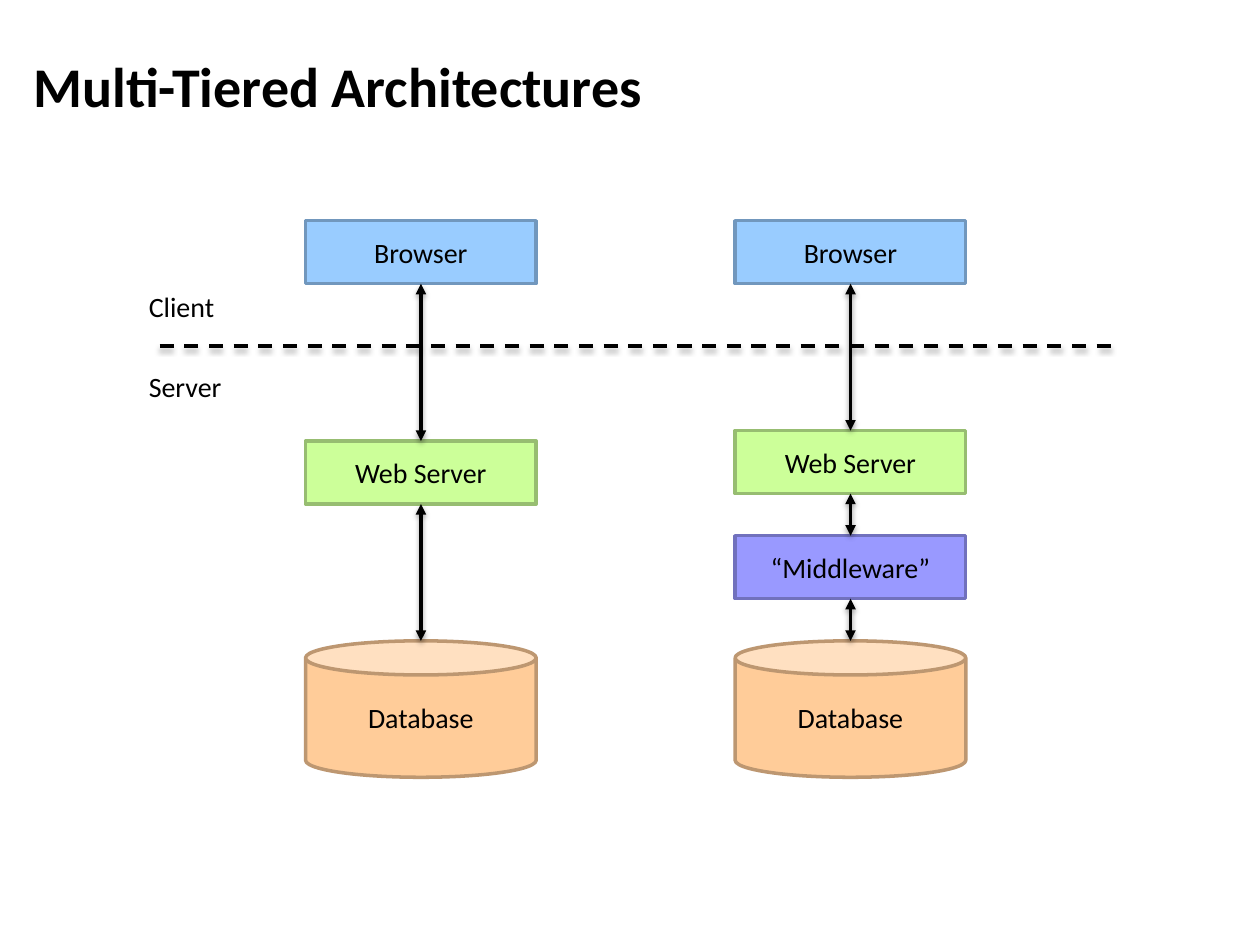
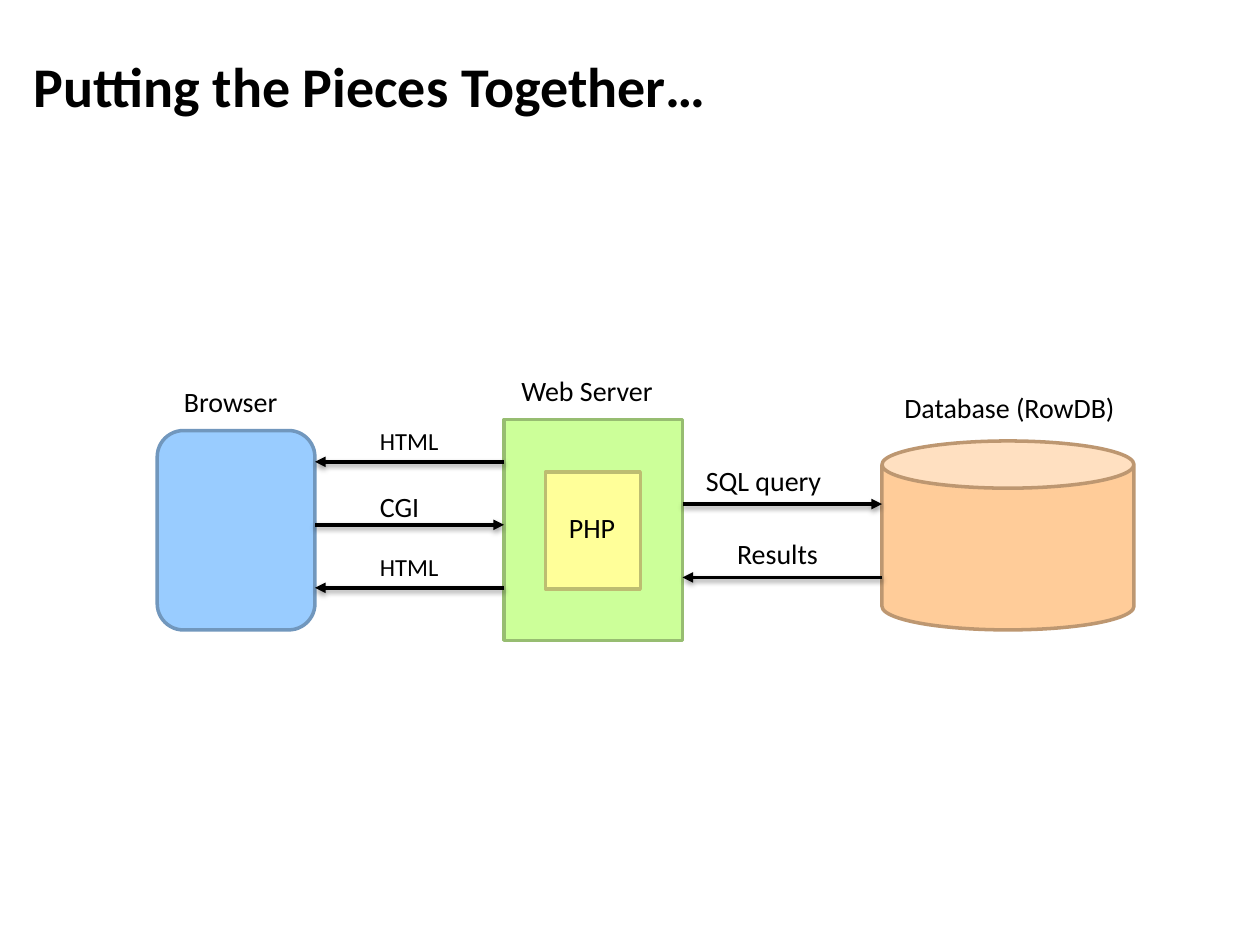
from dataclasses import dataclass
from itertools import pairwise

from lxml import etree
from pptx import Presentation
from pptx.dml.color import RGBColor
from pptx.enum.dml import MSO_LINE
from pptx.enum.shapes import MSO_CONNECTOR, MSO_SHAPE
from pptx.enum.text import MSO_ANCHOR, MSO_AUTO_SIZE, PP_ALIGN
from pptx.oxml import parse_xml
from pptx.oxml.ns import nsdecls, qn
from pptx.shapes.autoshape import Shape
from pptx.shapes.connector import Connector
from pptx.slide import Slide
from pptx.util import Cm, Pt

RECTANGLE = MSO_SHAPE.RECTANGLE
ROUNDED = MSO_SHAPE.ROUNDED_RECTANGLE
CYLINDER = MSO_SHAPE.CAN
STRAIGHT = MSO_CONNECTOR.STRAIGHT
DASH = MSO_LINE.DASH
MIDDLE = MSO_ANCHOR.MIDDLE
CENTER = PP_ALIGN.CENTER
LEFT = PP_ALIGN.LEFT
FIT_SHAPE = MSO_AUTO_SIZE.SHAPE_TO_FIT_TEXT
NO_FIT = MSO_AUTO_SIZE.NONE
TOP_SITE, BOTTOM_SITE = 0, 2

FONT = "Calibri"
BLACK, WHITE = "000000", "FFFFFF"
LINE_WIDTH = Pt(2)
LABEL_HEIGHT = 0.94

TIER_WIDTH = 4.65
TIER_HEIGHT = 1.27
DATABASE_HEIGHT = 2.75
BROWSER_TOP = 4.45
DATABASE_TOP = 12.92


@dataclass(frozen=True)
class Look:
    fill: str
    outline: str
    shape: MSO_SHAPE = RECTANGLE


BROWSER = Look("99CCFF", "7197BD")
BROWSER_WINDOW = Look("99CCFF", "7197BD", ROUNDED)
SERVER = Look("CCFF99", "97BD71")
MIDDLEWARE = Look("9999FF", "7171BD")
DATABASE = Look("FFCC99", "BD9771", CYLINDER)
SCRIPT = Look("FFFF99", "BDBD71")


@dataclass(frozen=True)
class Block:
    look: Look
    left: float
    top: float
    width: float
    height: float
    text: str = ""


@dataclass(frozen=True)
class Tier:
    text: str
    look: Look
    top: float
    height: float = TIER_HEIGHT


@dataclass(frozen=True)
class Label:
    text: str
    left: float
    top: float
    width: float
    size: int = 16
    height: float = LABEL_HEIGHT


@dataclass(frozen=True)
class Message:
    start: float
    end: float
    level: float
    label: Label


def color(value: str) -> RGBColor:
    return RGBColor.from_string(value)


def write(shape: Shape, text: str, size: int, align: PP_ALIGN, bold: bool = False) -> None:
    shape.text_frame.text = text
    para = shape.text_frame.paragraphs[0]
    para.alignment = align
    para.font.name = FONT
    para.font.size = Pt(size)
    para.font.bold = bold
    para.font.color.rgb = color(BLACK)


def add_page(deck: Presentation, heading: str) -> Slide:
    page = deck.slides.add_slide(deck.slide_layouts[5])
    page.background.fill.solid()
    page.background.fill.fore_color.rgb = color(WHITE)
    title = page.shapes.title
    title.left, title.top = Cm(0.42), Cm(0.3)
    title.width, title.height = Cm(24.13), Cm(2.85)
    write(title, heading, 32, LEFT, bold=True)
    title.text_frame.vertical_anchor = MIDDLE
    title.text_frame.auto_size = NO_FIT
    return page


def add_block(page: Slide, block: Block) -> Shape:
    box = page.shapes.add_shape(
        block.look.shape, Cm(block.left), Cm(block.top), Cm(block.width), Cm(block.height)
    )
    box.shadow.inherit = False
    box.fill.solid()
    box.fill.fore_color.rgb = color(block.look.fill)
    box.line.color.rgb = color(block.look.outline)
    box.line.width = LINE_WIDTH
    if block.text:
        write(box, block.text, 16, CENTER)
        box.text_frame.vertical_anchor = MIDDLE
        box.text_frame.word_wrap = False
    return box


def add_label(page: Slide, label: Label) -> None:
    box = page.shapes.add_textbox(
        Cm(label.left), Cm(label.top), Cm(label.width), Cm(label.height)
    )
    write(box, label.text, label.size, LEFT)
    box.text_frame.word_wrap = False
    box.text_frame.auto_size = FIT_SHAPE


def add_line(
    page: Slide, start: tuple[float, float], end: tuple[float, float], *arrow_ends: str
) -> Connector:
    line = page.shapes.add_connector(STRAIGHT, *(Cm(value) for value in start + end))
    line.line.color.rgb = color(BLACK)
    line.line.width = LINE_WIDTH
    outline = line.line._get_or_add_ln()
    for arrow_end in arrow_ends:
        etree.SubElement(outline, qn(f"a:{arrow_end}"), type="triangle")
    line._element.spPr.append(parse_xml(
        f'<a:effectLst {nsdecls("a")}>'
        f'<a:outerShdw blurRad="{Pt(3.1)}" dist="{Pt(1.6)}" dir="5400000" rotWithShape="0">'
        f'<a:srgbClr val="{BLACK}"><a:alpha val="38000"/></a:srgbClr>'
        '</a:outerShdw></a:effectLst>'
    ))
    return line


def add_tower(page: Slide, left: float, tiers: list[Tier]) -> None:
    boxes = [
        add_block(page, Block(tier.look, left, tier.top, TIER_WIDTH, tier.height, tier.text))
        for tier in tiers
    ]
    center = left + TIER_WIDTH / 2
    for (upper, upper_box), (lower, lower_box) in pairwise(zip(tiers, boxes)):
        arrow = add_line(
            page, (center, upper.top + upper.height), (center, lower.top), "headEnd", "tailEnd"
        )
        arrow.begin_connect(upper_box, BOTTOM_SITE)
        if lower.look.shape == RECTANGLE:
            arrow.end_connect(lower_box, TOP_SITE)


def add_message(page: Slide, message: Message) -> None:
    add_label(page, message.label)
    add_line(page, (message.start, message.level), (message.end, message.level), "tailEnd")


def build_tiers_page(deck: Presentation) -> None:
    page = add_page(deck, "Multi-Tiered Architectures")
    browser = Tier("Browser", BROWSER, BROWSER_TOP)
    database = Tier("Database", DATABASE, DATABASE_TOP, DATABASE_HEIGHT)
    add_tower(page, 6.16, [browser, Tier("Web Server", SERVER, 8.89), database])
    add_tower(page, 14.82, [
        browser,
        Tier("Web Server", SERVER, 8.68),
        Tier("“Middleware”", MIDDLEWARE, 10.8),
        database,
    ])
    boundary = add_line(page, (3.22, 6.98), (22.48, 6.98))
    boundary.line.dash_style = DASH
    add_label(page, Label("Client", 2.75, 5.72, 1.9))
    add_label(page, Label("Server", 2.75, 7.32, 2.04))


def build_pieces_page(deck: Presentation) -> None:
    page = add_page(deck, "Putting the Pieces Together…")
    browser = Block(BROWSER_WINDOW, 3.17, 8.68, 3.18, 4.02)
    server = Block(SERVER, 10.16, 8.46, 3.6, 4.45)
    database = Block(DATABASE, 17.78, 8.89, 5.08, 3.81)
    script = Block(SCRIPT, 11, 9.52, 1.91, 2.36)
    for block in (browser, server, database, script):
        add_block(page, block)

    for label in (
        Label("Browser", 3.46, 7.62, 2.49),
        Label("Web Server", 10.26, 7.41, 3.3),
        Label("Database (RowDB)", 17.98, 7.75, 4.88),
        Label("PHP", 11.22, 10.16, 1.49),
    ):
        add_label(page, label)

    browser_edge = browser.left + browser.width
    server_edge = server.left + server.width
    for message in (
        Message(server.left, browser_edge, 9.31, Label("HTML", 7.41, 8.46, 1.82, 14, 0.86)),
        Message(browser_edge, server.left, 10.58, Label("CGI", 7.41, 9.74, 1.47)),
        Message(server.left, browser_edge, 11.85, Label("HTML", 7.41, 11, 1.82, 14, 0.86)),
        Message(server_edge, database.left, 10.16, Label("SQL query", 13.98, 9.22, 3.02)),
        Message(database.left, server_edge, 11.64, Label("Results", 14.61, 10.7, 2.15)),
    ):
        add_message(page, message)


def main() -> None:
    deck = Presentation()
    deck.slide_width, deck.slide_height = Cm(25.4), Cm(19.05)
    build_tiers_page(deck)
    build_pieces_page(deck)
    deck.save("out.pptx")


if __name__ == "__main__":
    main()
